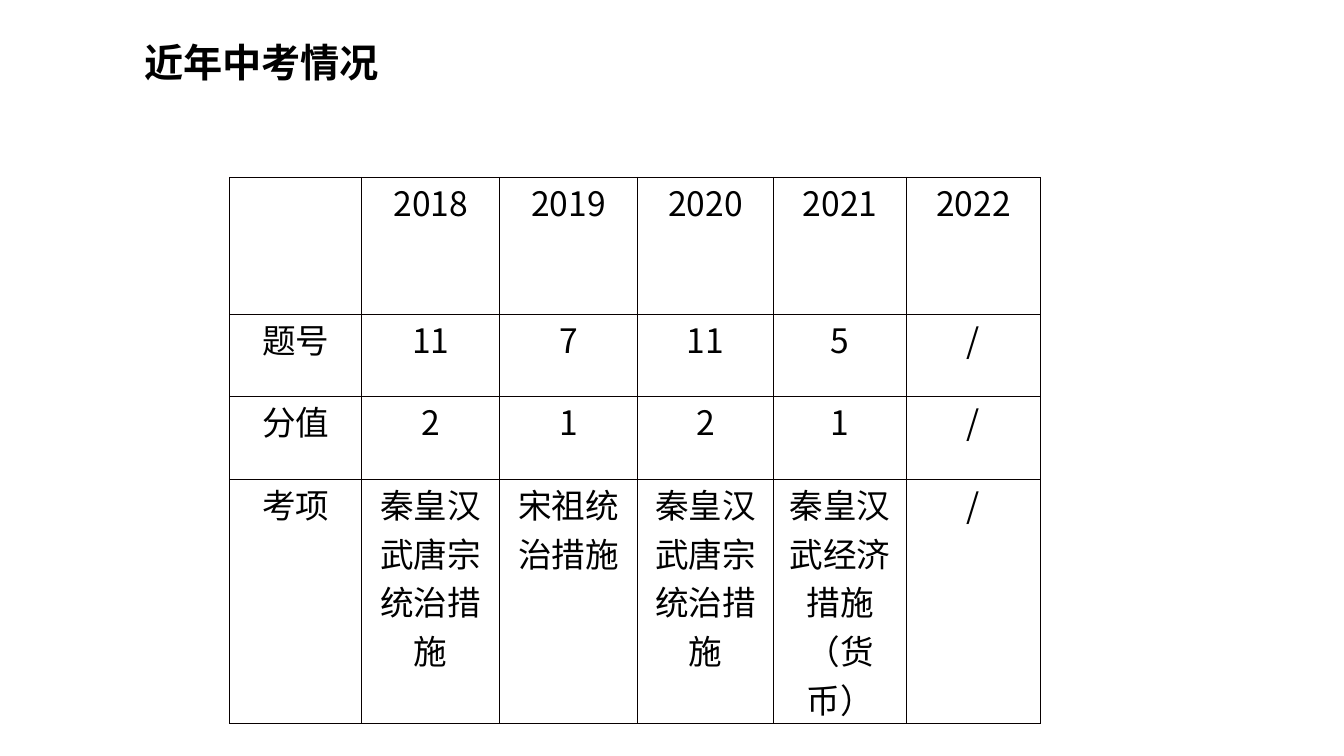
from lxml.etree import SubElement
from pptx import Presentation
from pptx.dml.color import RGBColor
from pptx.enum.text import PP_ALIGN
from pptx.oxml.ns import qn
from pptx.util import Cm, Pt

CJK_FONT = "Noto Sans CJK SC"


def format_run(run, size, font_name, color, bold=False):
    run.font.size = Pt(size)
    run.font.name = font_name
    run.font.bold = bold
    run.font.color.rgb = RGBColor.from_string(color)
    SubElement(run.font._element, qn("a:ea"), typeface=CJK_FONT)


def add_borders(cell, color, width):
    properties = cell._tc.get_or_add_tcPr()
    for index, side in enumerate(("lnL", "lnR", "lnT", "lnB")):
        line = SubElement(properties, qn(f"a:{side}"), w=str(Pt(width)))
        fill = SubElement(line, qn("a:solidFill"))
        SubElement(fill, qn("a:srgbClr"), val=color)
        properties.insert(index, line)


presentation = Presentation()
presentation.slide_width = Cm(33.87)
presentation.slide_height = Cm(19.05)
slide = presentation.slides.add_slide(presentation.slide_layouts[6])

# Title
title = slide.shapes.add_textbox(Cm(3.38), Cm(0.84), Cm(19.84), Cm(1.93))
title.text_frame.word_wrap = True
title.text_frame.text = "近年中考情况"
format_run(title.text_frame.paragraphs[0].runs[0], 28, "Calibri", "000000", bold=True)

# Exam table, with a last row tall enough for five lines of text
exam_rows = [
    ["", "2018", "2019", "2020", "2021", "2022"],
    ["题号", "11", "7", "11", "5", "/"],
    ["分值", "2", "1", "2", "1", "/"],
    ["考项", "秦皇汉武唐宗统治措施", "宋祖统治措施", "秦皇汉武唐宗统治措施",
     "秦皇汉武经济措施（货币）", "/"],
]
column_widths = [3.33, 3.47, 3.48, 3.42, 3.36, 3.37]
row_heights = [3.45, 2.08, 2.08, 6.15]

table = slide.shapes.add_table(
    len(row_heights), len(column_widths), Cm(5.79), Cm(4.47),
    Cm(sum(column_widths)), Cm(sum(row_heights))).table
table.first_row = False
table.horz_banding = False
for column, width in zip(table.columns, column_widths):
    column.width = Cm(width)
for row, height in zip(table.rows, row_heights):
    row.height = Cm(height)

# Cells
for row, texts in zip(table.rows, exam_rows):
    for cell, text in zip(row.cells, texts):
        cell.fill.background()
        cell.margin_left = cell.margin_right = Cm(0.18)
        cell.margin_top = cell.margin_bottom = Cm(0)
        add_borders(cell, "080000", 1)
        cell.text_frame.text = text
        paragraph = cell.text_frame.paragraphs[0]
        paragraph.alignment = PP_ALIGN.CENTER
        for run in paragraph.runs:
            format_run(run, 24, CJK_FONT, "000000")

presentation.save("out.pptx")
